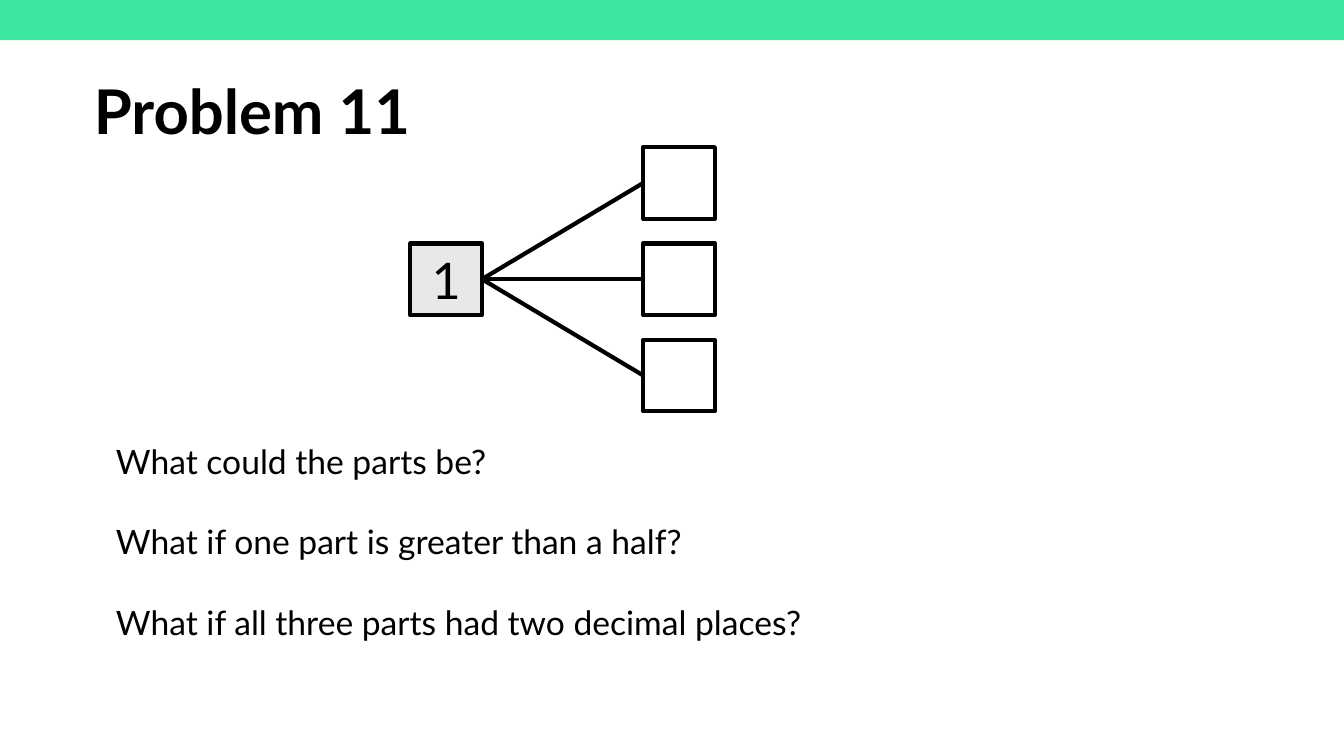
"""Build the Problem 11 slide: a part-whole model with three questions."""
from lxml import etree
from pptx import Presentation, util as u
from pptx.dml.color import RGBColor
from pptx.enum import shapes, text
from pptx.oxml.ns import qn

W, H = 13.33, 7.5
BOX, PITCH = 0.71, 0.955
WHOLE_X, PART_X, TOP = 4.07, 6.38, 1.46
QUESTIONS = [
    "What could the parts be?",
    "What if one part is greater than a half?",
    "What if all three parts had two decimal places?",
]


def rgb(value):
    return RGBColor.from_string(value)


def add_box(x, y, w, h, fill, line=None):
    sp = s.shapes.add_shape(shapes.MSO_SHAPE.RECTANGLE, *map(u.Inches, (x, y, w, h)))
    sp.shadow.inherit = False
    sp.fill.solid()
    sp.fill.fore_color.rgb = rgb(fill)
    if line:
        sp.line.color.rgb = rgb(line)
        sp.line.width = u.Pt(3)
    else:
        sp.line.fill.background()
    return sp


prs = Presentation()
prs.slide_width, prs.slide_height = u.Inches(W), u.Inches(H)
s = prs.slides.add_slide(prs.slide_layouts[1])
title, body = s.shapes.title, s.placeholders[1]

add_box(0, 0, W, 0.4, "3FE6A0")
whole = add_box(WHOLE_X, TOP + PITCH, BOX, BOX, "E8E8E8", "000000")
for row in range(3):
    part = add_box(PART_X, TOP + row * PITCH, BOX, BOX, "FFFFFF", "000000")
    link = s.shapes.add_connector(shapes.MSO_CONNECTOR.STRAIGHT, 0, 0, 0, 0)
    link.begin_connect(whole, 3)
    link.end_connect(part, 1)
    link.line.color.rgb = rgb("000000")
    link.line.width = u.Pt(3)
    etree.SubElement(link._element.spPr, qn("a:effectLst"))

for sp, place in ((title, (0.83, 0.41, 11.5, 1.45)), (body, (1.05, 4.32, 11.5, 2.12))):
    sp.left, sp.top, sp.width, sp.height = map(u.Inches, place)

title.text_frame.text = "Problem 11"
whole.text_frame.text = "1"
body.text_frame.text = "\n".join(QUESTIONS)

for i, p in enumerate(body.text_frame.paragraphs):
    pPr = p._p.get_or_add_pPr()
    pPr.set("marL", "0")
    pPr.set("indent", "0")
    etree.SubElement(pPr, qn("a:buNone"))
    p.space_before = u.Pt(28.8 if i else 0)

middle, top = text.MSO_ANCHOR.MIDDLE, text.MSO_ANCHOR.TOP
left, center = text.PP_ALIGN.LEFT, text.PP_ALIGN.CENTER
formats = [
    (title, middle, {"alignment": left, "line_spacing": 0.9}, {"size": u.Pt(44), "bold": True}),
    (whole, middle, {"alignment": center}, {"size": u.Pt(36)}),
    (body, top, {"alignment": left, "line_spacing": 1.0}, {"size": u.Pt(24)}),
]
for sp, anchor, layout, font in formats:
    tf = sp.text_frame
    tf.word_wrap = True
    tf.auto_size = text.MSO_AUTO_SIZE.NONE
    tf.vertical_anchor = anchor
    for p in tf.paragraphs:
        for name, value in layout.items():
            setattr(p, name, value)
        for r in p.runs:
            r.font.color.rgb = rgb("000000")
            for name, value in {"name": "Lato", **font}.items():
                setattr(r.font, name, value)

prs.save("out.pptx")
